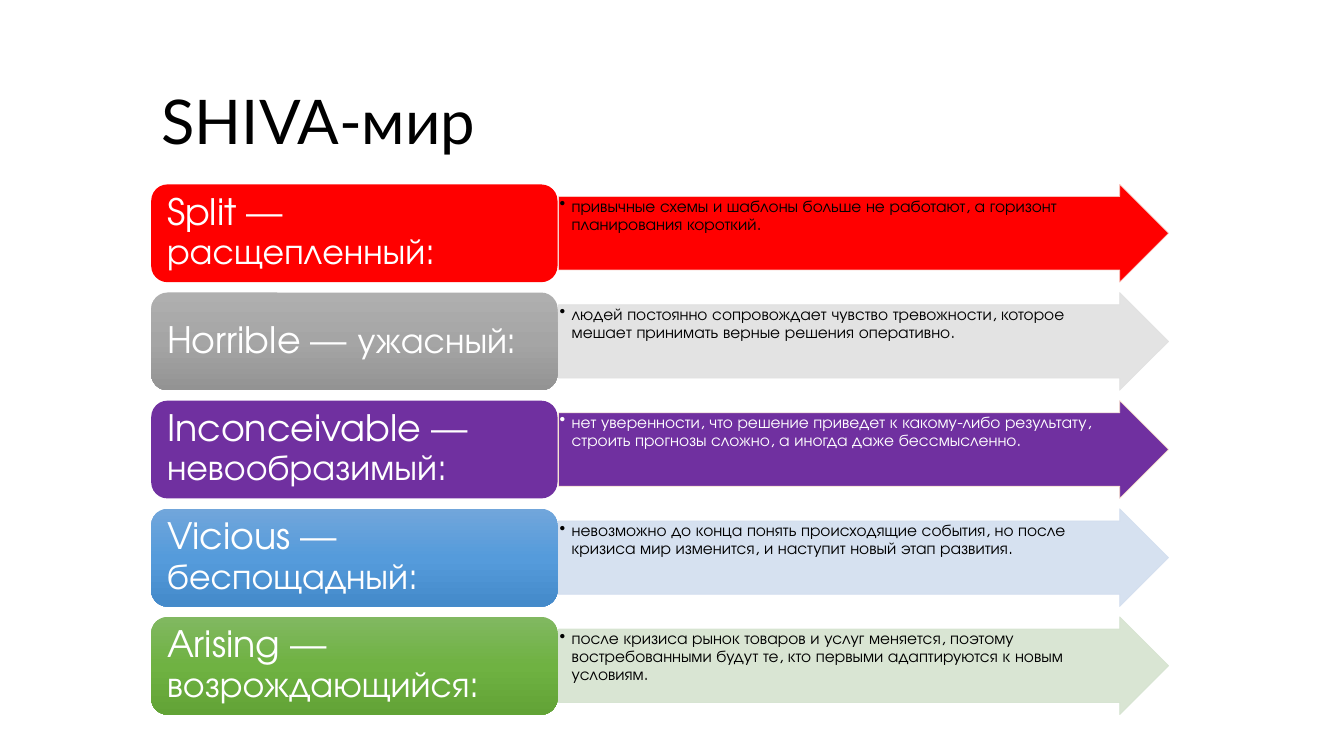
from copy import deepcopy

from lxml.etree import SubElement
from pptx import Presentation
from pptx.dml.color import RGBColor
from pptx.enum.shapes import MSO_SHAPE
from pptx.enum.text import MSO_ANCHOR, MSO_AUTO_SIZE, PP_ALIGN
from pptx.oxml.ns import qn
from pptx.util import Inches, Pt

COLORS = {
    "black": "000000", "white": "FFFFFF", "red": "FF0000", "purple": "7030A0",
    "peach": "F8D7CE", "cream": "FFE8CC",
    "gray": "E1E1E1", "blue": "D2DEEF", "green": "D5E3CF",
    "gray top": "AFAFAF", "gray mid": "A5A5A5", "gray end": "939393",
    "blue top": "71A6DB", "blue mid": "559BDB", "blue end": "448ACA",
    "green top": "81B861", "green mid": "6FB242", "green end": "62A336",
}

# label, detail, label fill (three names make a gradient), arrow fill, arrow line, detail colour
ROWS = [
    ("Split — расщепленный:",
     "привычные схемы и шаблоны больше не работают, а горизонт планирования короткий.",
     ["red"], "red", "peach", "black"),
    ("Horrible — ужасный:",
     "людей постоянно сопровождает чувство тревожности, которое мешает принимать "
     "верные решения оперативно.",
     ["gray top", "gray mid", "gray end"], "gray", "gray", "black"),
    ("Inconceivable — невообразимый:",
     "нет уверенности, что решение приведет к какому-либо результату, строить прогнозы "
     "сложно, а иногда даже бессмысленно.",
     ["purple"], "purple", "cream", "white"),
    ("Vicious — беспощадный:",
     "невозможно до конца понять происходящие события, но после кризиса мир изменится, "
     "и наступит новый этап развития.",
     ["blue top", "blue mid", "blue end"], "blue", "blue", "black"),
    ("Arising — возрождающийся:",
     "после кризиса рынок товаров и услуг меняется, поэтому востребованными будут те, "
     "кто первыми адаптируются к новым условиям.",
     ["green top", "green mid", "green end"], "green", "green", "black"),
]

TOP, STEP, HEIGHT = 1.83, 4.29 / 4, 0.97


def rgb(name):
    return RGBColor.from_string(COLORS[name])


def fade(node):
    """Make every colour under the node 90 % opaque."""
    for color in node.iter(qn("a:srgbClr")):
        SubElement(color, qn("a:alpha"), val="90000")


class Deck:
    head = "Lato"
    body = "TeX Gyre Adventor"

    def __init__(self):
        self.show = Presentation()
        self.show.slide_width = Inches(13.33)
        self.show.slide_height = Inches(7.5)
        self.slide = self.show.slides.add_slide(self.show.slide_layouts[5])

    def put_text(self, shape, text, font, size, color, anchor, insets, bullet=False):
        frame = shape.text_frame
        frame.text = text
        frame.word_wrap = True
        frame.auto_size = MSO_AUTO_SIZE.NONE
        frame.vertical_anchor = anchor
        (frame.margin_left, frame.margin_top,
         frame.margin_right, frame.margin_bottom) = map(Inches, insets)
        para = frame.paragraphs[0]
        para.alignment = PP_ALIGN.LEFT
        para.line_spacing = 0.9
        if bullet:
            props = para._p.get_or_add_pPr()
            props.set("marL", str(Inches(0.12)))
            props.set("indent", str(Inches(-0.12)))
            SubElement(props, qn("a:buChar"), char="•")
        style = para.runs[0].font
        style.name, style.size = font, Pt(size)
        style.color.rgb = rgb(color)

    def title(self, text):
        shape = self.slide.shapes.title
        shape.left, shape.top = Inches(1.5), Inches(0.86)
        shape.width, shape.height = Inches(10), Inches(1.25)
        self.put_text(shape, text, self.head, 44, "black", MSO_ANCHOR.TOP,
                      (0.1, 0.05, 0.1, 0.05))

    def block(self, kind, left, top, width):
        shape = self.slide.shapes.add_shape(
            kind, Inches(left), Inches(top), Inches(width), Inches(HEIGHT))
        shape.shadow.inherit = False
        return shape

    def label(self, top, text, fills):
        shape = self.block(MSO_SHAPE.ROUNDED_RECTANGLE, 1.5, top, 4.03)
        shape.line.fill.background()
        if len(fills) == 1:
            shape.fill.solid()
            shape.fill.fore_color.rgb = rgb(fills[0])
        else:
            self.blend(shape, fills)
        self.put_text(shape, text, self.body, 26, "white", MSO_ANCHOR.MIDDLE,
                      (0.11, 0.05, 0.11, 0.05))

    def blend(self, shape, fills):
        """Fill with a three-colour gradient that runs downwards."""
        shape.fill.gradient()
        shape.fill.gradient_angle = 270
        stops = shape.element.spPr.find(".//" + qn("a:gsLst"))
        stops.insert(1, deepcopy(stops[0]))
        for stop, place, name in zip(shape.fill.gradient_stops, (0, 0.5, 1), fills):
            stop.position = place
            stop.color.rgb = rgb(name)

    def arrow(self, top, text, fill, line, color):
        shape = self.block(MSO_SHAPE.RIGHT_ARROW, 5.54, top, 6.05)
        shape.adjustments[0], shape.adjustments[1] = 0.75, 0.5
        shape.fill.solid()
        shape.fill.fore_color.rgb = rgb(fill)
        shape.line.color.rgb = rgb(line)
        shape.line.width = Pt(0.5)
        props = shape.element.spPr
        fade(props if fill == line else props.find(qn("a:ln")))
        self.put_text(shape, text, self.body, 12, color, MSO_ANCHOR.TOP,
                      (0.01, 0.01, 0.25, 0.01), bullet=True)


def main():
    deck = Deck()
    deck.title("SHIVA-мир")
    for n, (name, text, fills, fill, line, color) in enumerate(ROWS):
        top = TOP + n * STEP
        deck.arrow(top, text, fill, line, color)
        deck.label(top, name, fills)
    deck.show.save("out.pptx")


if __name__ == "__main__":
    main()
